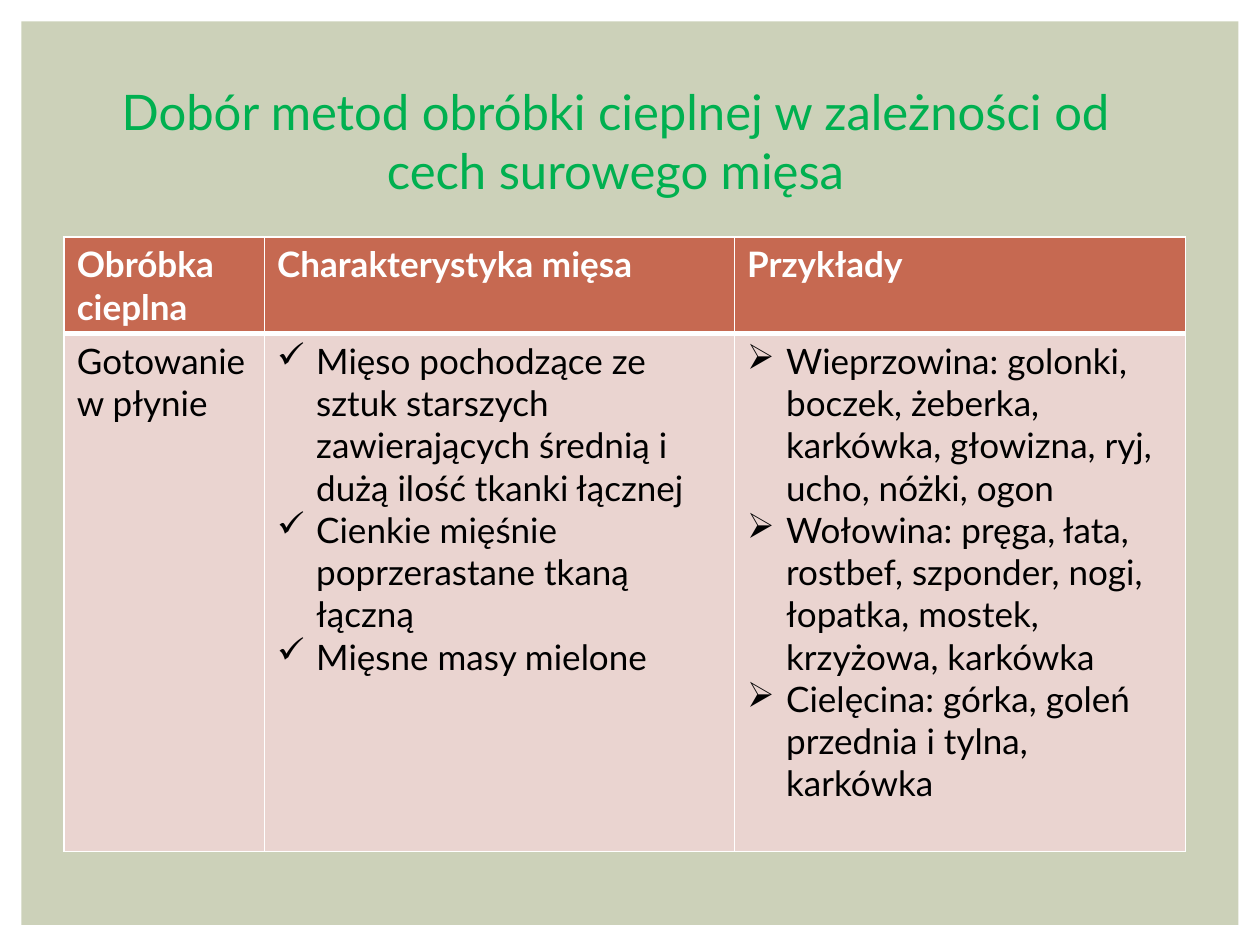
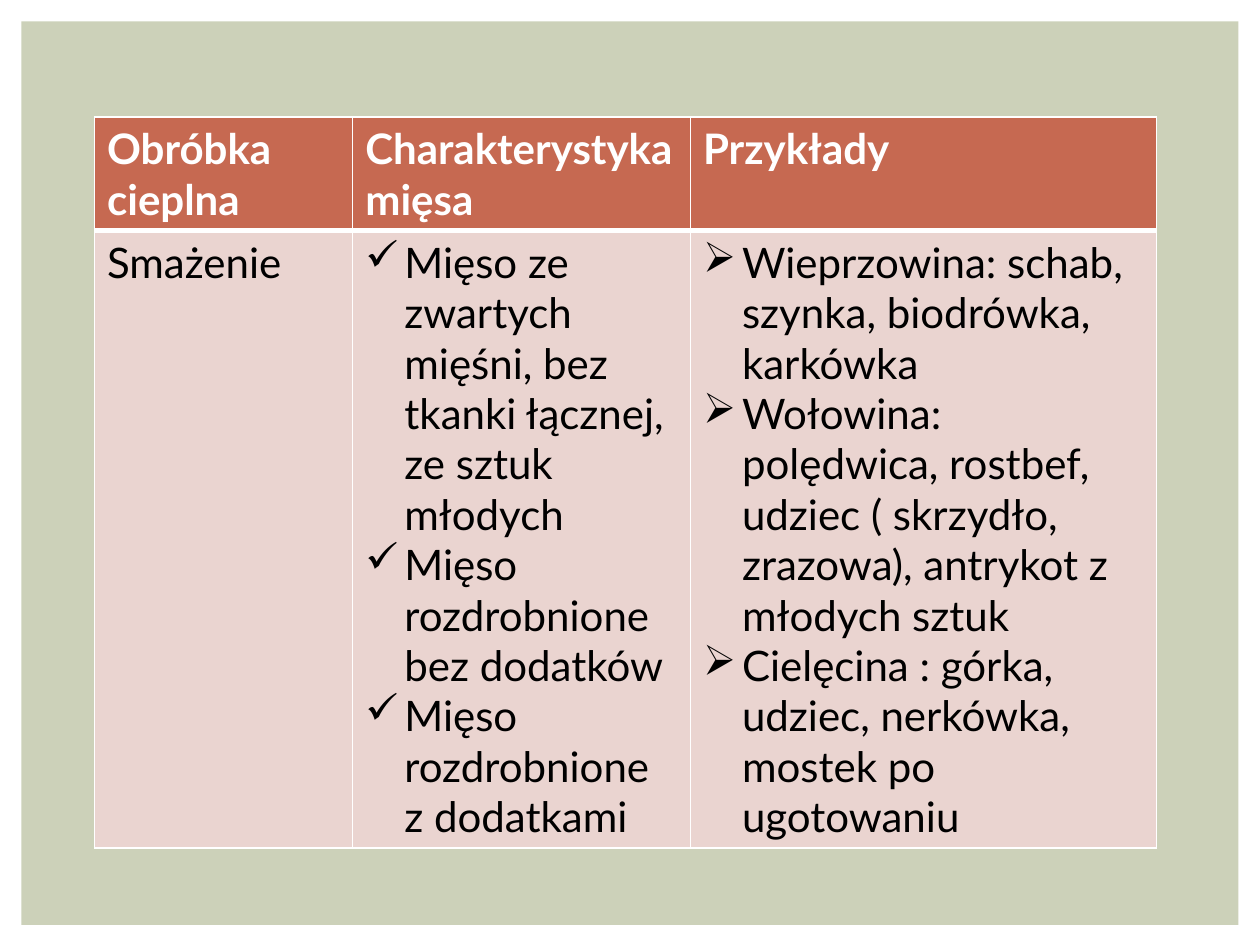
from dataclasses import dataclass
from typing import Any

from lxml import etree
from pptx import Presentation
from pptx.dml.color import RGBColor
from pptx.enum.shapes import MSO_SHAPE
from pptx.enum.text import PP_ALIGN
from pptx.oxml.ns import qn
from pptx.util import Inches, Pt

RECTANGLE = MSO_SHAPE.RECTANGLE
CENTER = PP_ALIGN.CENTER
BLANK_LAYOUT = 6

COLORS = {
    "panel": "CCD1B9",
    "title": "00B050",
    "header": "C66951",
    "body": "EAD4D0",
    "border": "FFFFFF",
    "header_text": "FFFFFF",
    "body_text": "000000",
}
FONT = "Lato"
BULLET_INDENT = Inches(0.31)
THIN, THICK = Pt(1), Pt(3)
HEADERS = ("Obróbka cieplna", "Charakterystyka mięsa", "Przykłady")
COLUMN_BULLETS = ("", "✓", "➢")


@dataclass
class TreatmentTable:
    left: float
    top: float
    column_widths: tuple[float, ...]
    row_heights: tuple[float, ...]
    font_size: int
    treatment: str
    meat_features: tuple[str, ...]
    examples: tuple[str, ...]


@dataclass
class TreatmentSlide:
    table: TreatmentTable
    title: str = ""


SLIDES = (
    TreatmentSlide(
        title="Dobór metod obróbki cieplnej w zależności od cech surowego mięsa",
        table=TreatmentTable(
            left=0.51, top=1.88,
            column_widths=(1.59, 3.73, 3.58), row_heights=(0.76, 4.11),
            font_size=20,
            treatment="Gotowanie w płynie",
            meat_features=(
                "Mięso pochodzące ze sztuk starszych zawierających średnią i dużą ilość tkanki łącznej",
                "Cienkie mięśnie poprzerastane tkaną łączną",
                "Mięsne masy mielone",
            ),
            examples=(
                "Wieprzowina: golonki, boczek, żeberka, karkówka, głowizna, ryj, ucho, nóżki, ogon",
                "Wołowina: pręga, łata, rostbef, szponder, nogi, łopatka, mostek, krzyżowa, karkówka",
                "Cielęcina: górka, goleń przednia i tylna, karkówka",
            ),
        ),
    ),
    TreatmentSlide(
        table=TreatmentTable(
            left=0.75, top=0.93,
            column_widths=(2.05, 2.68, 3.7), row_heights=(0.9, 4.9),
            font_size=24,
            treatment="Smażenie",
            meat_features=(
                "Mięso ze zwartych mięśni, bez tkanki łącznej, ze sztuk młodych",
                "Mięso rozdrobnione bez dodatków",
                "Mięso rozdrobnione z dodatkami",
            ),
            examples=(
                "Wieprzowina: schab, szynka, biodrówka, karkówka",
                "Wołowina: polędwica, rostbef, udziec ( skrzydło, zrazowa), antrykot z młodych sztuk",
                "Cielęcina : górka, udziec, nerkówka, mostek po ugotowaniu",
            ),
        ),
    ),
)


def color(name: str) -> RGBColor:
    return RGBColor.from_string(COLORS[name])


def add_text(paragraph: Any, text: str, size: int, color_name: str, bold: bool = False) -> None:
    run = paragraph.add_run()
    run.text = text
    for attribute, value in {"name": FONT, "size": Pt(size), "bold": bold}.items():
        setattr(run.font, attribute, value)
    run.font.color.rgb = color(color_name)


def add_bullet(paragraph: Any, symbol: str) -> None:
    properties = paragraph._p.get_or_add_pPr()
    properties.set("marL", str(BULLET_INDENT))
    properties.set("indent", str(-BULLET_INDENT))
    etree.SubElement(properties, qn("a:buChar"), char=symbol)


def add_borders(cell: Any, top: int, bottom: int) -> None:
    properties = cell._tc.get_or_add_tcPr()
    for edge, width in {"lnL": THIN, "lnR": THIN, "lnT": top, "lnB": bottom}.items():
        line = etree.SubElement(properties, qn(f"a:{edge}"), w=str(width))
        fill = etree.SubElement(line, qn("a:solidFill"))
        etree.SubElement(fill, qn("a:srgbClr"), val=COLORS["border"])


def fill_cell(cell: Any, texts: tuple[str, ...], size: int, is_header: bool, bullet: str) -> None:
    # The thick rule lies between the header and the body
    add_borders(cell, *((THIN, THICK) if is_header else (THICK, THIN)))
    role = "header" if is_header else "body"
    cell.fill.solid()
    cell.fill.fore_color.rgb = color(role)
    frame = cell.text_frame
    for index, text in enumerate(texts):
        paragraph = frame.add_paragraph() if index else frame.paragraphs[0]
        if bullet:
            add_bullet(paragraph, bullet)
        add_text(paragraph, text, size, f"{role}_text", is_header)


def add_treatment_table(slide: Any, content: TreatmentTable) -> None:
    table = slide.shapes.add_table(
        len(content.row_heights), len(content.column_widths),
        Inches(content.left), Inches(content.top),
        Inches(sum(content.column_widths)), Inches(sum(content.row_heights)),
    ).table
    for column, width in zip(table.columns, content.column_widths):
        column.width = Inches(width)
    for row, height in zip(table.rows, content.row_heights):
        row.height = Inches(height)
    body = ((content.treatment,), content.meat_features, content.examples)
    for index, (header, texts) in enumerate(zip(HEADERS, body)):
        fill_cell(table.cell(0, index), (header,), content.font_size, True, "")
        fill_cell(table.cell(1, index), texts, content.font_size, False, COLUMN_BULLETS[index])


def add_panel(slide: Any) -> None:
    panel = slide.shapes.add_shape(
        RECTANGLE, Inches(0.17), Inches(0.17), Inches(9.66), Inches(7.17)
    )
    panel.shadow.inherit = False
    panel.fill.solid()
    panel.fill.fore_color.rgb = color("panel")
    panel.line.fill.background()


def add_title(slide: Any, title: str) -> None:
    frame = slide.shapes.add_textbox(
        Inches(0.67), Inches(0.6), Inches(8.43), Inches(2.56)
    ).text_frame
    frame.word_wrap = True
    paragraph = frame.paragraphs[0]
    paragraph.alignment = CENTER
    add_text(paragraph, title, 28, "title")


def main() -> None:
    presentation = Presentation()
    presentation.slide_width = Inches(10)
    presentation.slide_height = Inches(7.5)
    for content in SLIDES:
        slide = presentation.slides.add_slide(presentation.slide_layouts[BLANK_LAYOUT])
        add_panel(slide)
        if content.title:
            add_title(slide, content.title)
        add_treatment_table(slide, content.table)
    presentation.save("out.pptx")


if __name__ == "__main__":
    main()
